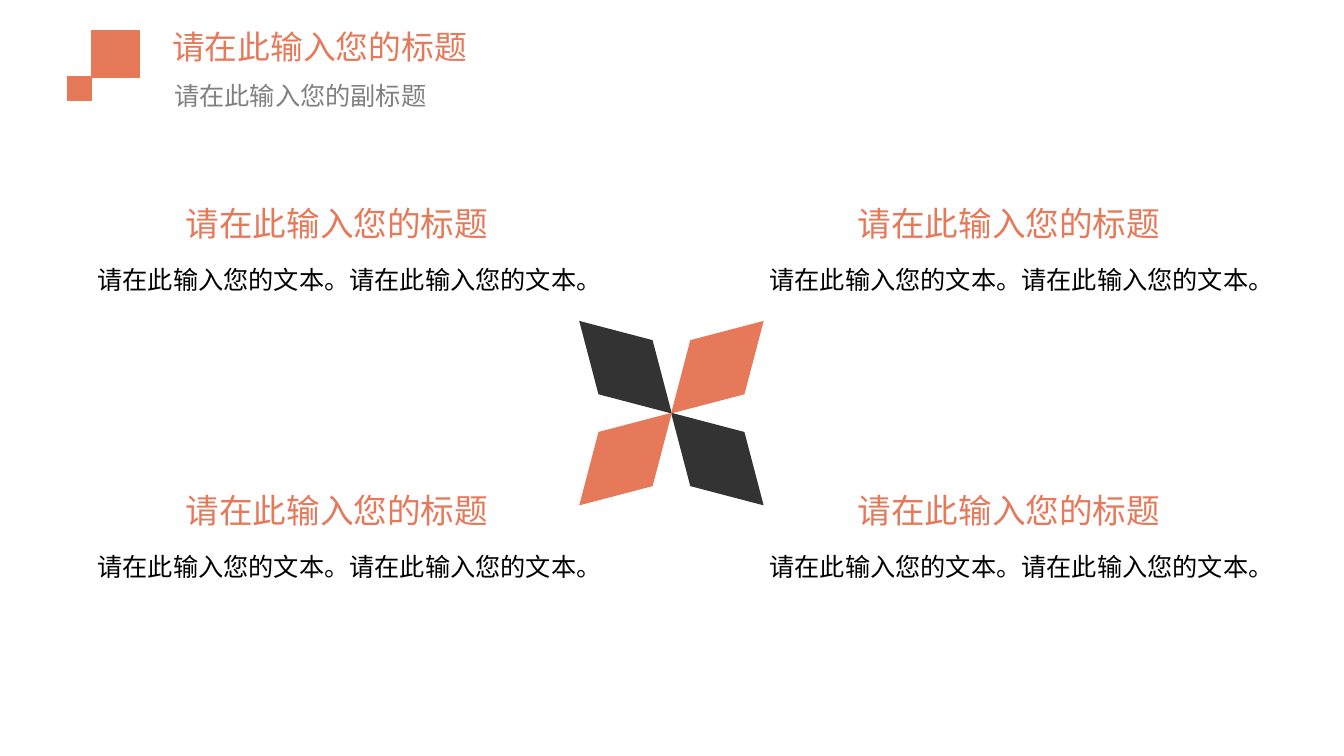
from dataclasses import dataclass

from pptx import Presentation
from pptx.dml.color import RGBColor
from pptx.enum import shapes, text
from pptx.util import Pt

ORANGE, DARK, GREY, BLACK = "E6795A", "333333", "808080", "000000"
FONT = "Arial"


@dataclass
class Label:
    wording: str
    left: float
    top: float
    width: float
    height: float
    size: float
    color: str
    align: text.PP_ALIGN = text.PP_ALIGN.LEFT
    anchor: text.MSO_ANCHOR = text.MSO_ANCHOR.TOP
    line_spacing: float = 1.0


@dataclass
class Square:
    left: float
    top: float
    side: float


@dataclass
class Petal:
    column: int  # -1 left of the hub, 1 right of it
    row: int  # -1 above the hub, 1 below it


def rgb(color: str) -> RGBColor:
    return RGBColor.from_string(color)


def draw_label(slide, label: Label) -> None:
    box = slide.shapes.add_textbox(
        Pt(label.left), Pt(label.top), Pt(label.width), Pt(label.height))
    frame = box.text_frame
    frame.word_wrap = True
    frame.vertical_anchor = label.anchor
    paragraph = frame.paragraphs[0]
    paragraph.text = label.wording
    paragraph.alignment = label.align
    paragraph.line_spacing = label.line_spacing
    paragraph.font.name = FONT
    paragraph.font.size = Pt(label.size)
    paragraph.font.color.rgb = rgb(label.color)


def draw_square(slide, square: Square) -> None:
    shape = slide.shapes.add_shape(
        shapes.MSO_SHAPE.RECTANGLE, Pt(square.left), Pt(square.top),
        Pt(square.side), Pt(square.side))
    shape.shadow.inherit = False
    shape.fill.solid()
    shape.fill.fore_color.rgb = rgb(ORANGE)
    shape.line.color.rgb = rgb(ORANGE)
    shape.line.width = Pt(0.75)


def draw_petal(slide, petal: Petal) -> None:
    hub_x, hub_y, offset = 479.6, 295.1, 32.8
    width, height = 93.6, 54.7
    falling = petal.column == petal.row
    shape = slide.shapes.add_shape(
        shapes.MSO_SHAPE.FLOWCHART_DECISION,
        Pt(hub_x + petal.column * offset - width / 2),
        Pt(hub_y + petal.row * offset - height / 2), Pt(width), Pt(height))
    shape.rotation = 45 if falling else 135
    shape.shadow.inherit = False
    shape.fill.solid()
    shape.fill.fore_color.rgb = rgb(DARK if falling else ORANGE)
    shape.line.fill.background()


def main() -> None:
    presentation = Presentation()
    presentation.slide_width, presentation.slide_height = Pt(960), Pt(540)
    slide = presentation.slides.add_slide(presentation.slide_layouts[6])

    # Corner squares
    for square in (Square(65.5, 21.6, 34), Square(48.4, 54.8, 17.2)):
        draw_square(slide, square)

    # Pinwheel of four petals
    for petal in (Petal(-1, -1), Petal(1, 1), Petal(1, -1), Petal(-1, 1)):
        draw_petal(slide, petal)

    # Four headed texts around the pinwheel
    center = text.PP_ALIGN.CENTER
    for top in (141.1, 346.3):
        for left, width in ((61.2, 359), (540, 361.4)):
            draw_label(slide, Label("请在此输入您的标题", left, top, width, 43.9,
                                    24, ORANGE, center))
            draw_label(slide, Label("请在此输入您的文本。请在此输入您的文本。",
                                    left, top + 43.9, width, 100.8,
                                    18, BLACK, center))

    # Slide title and subtitle
    draw_label(slide, Label("请在此输入您的标题", 115.9, 10.1, 688.3, 46.1,
                            23.4, ORANGE, anchor=text.MSO_ANCHOR.MIDDLE))
    draw_label(slide, Label("请在此输入您的副标题", 117.4, 56.2, 686.9, 38.9,
                            18, GREY, line_spacing=0.9))

    presentation.save("out.pptx")


if __name__ == "__main__":
    main()
